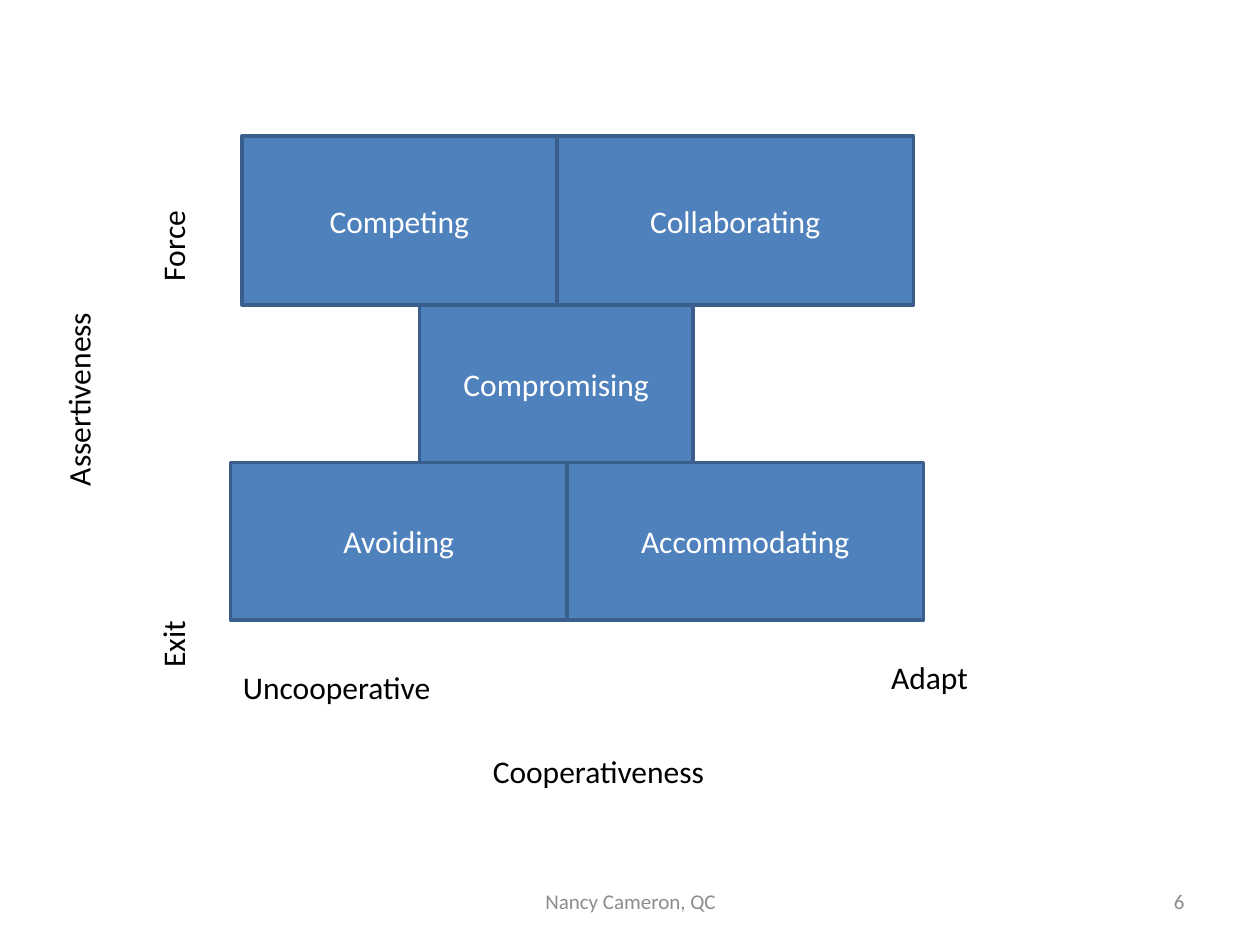
from pptx import Presentation
from pptx.dml.color import RGBColor
from pptx.enum.shapes import MSO_SHAPE
from pptx.enum.text import MSO_ANCHOR, MSO_AUTO_SIZE, PP_ALIGN
from pptx.oxml.ns import qn
from pptx.util import Inches, Pt

THEME = {
    "font": "Calibri", "body": 18, "small": 12, "edge": 2,
    "fill": "4F81BD", "line": "3A5F8C",
    "light": "FFFFFF", "dark": "000000", "grey": "8C8C8C",
}
LEFT, MID, RIGHT = PP_ALIGN.LEFT, PP_ALIGN.CENTER, PP_ALIGN.RIGHT

TOP = 1.08
ROWS = [
    (1.92, 1.34, [("Competing", 2.5), ("Collaborating", 2.83)]),
    (3.33, 1.25, [("Compromising", 2.17)]),
    (1.83, 1.25, [("Avoiding", 2.67), ("Accommodating", 2.83)]),
]
LABELS = [
    ("Cooperativeness", (3, 5.92, 3.5, 0.4), {"align": MID}),
    ("Uncooperative", (1.83, 5.25, 2.04, 0.4), {}),
    ("Adapt", (6, 5.17, 1.78, 0.4), {"align": RIGHT}),
    ("Assertiveness", (0.42, 1.92, 0.5, 2.5), {"align": MID, "turn": True}),
    ("Exit", (1.17, 4.93, 0.5, 0.47), {"turn": True, "wrap": False}),
    ("Force", (1.17, 1.5, 0.5, 0.83), {"turn": True}),
]
FOOTER = [
    ("Nancy Cameron, QC", (3.42, 6.95, 3.17, 0.4), MID),
    ("6", (7.17, 6.95, 2.33, 0.4), RIGHT),
]


def write(shape, text, size="body", color="dark", align=LEFT,
          anchor=MSO_ANCHOR.TOP, wrap=True, turn=False, grow=False):
    """Put formatted text into a shape."""
    frame = shape.text_frame
    frame.word_wrap = wrap
    frame.vertical_anchor = anchor
    if grow:
        frame.auto_size = MSO_AUTO_SIZE.SHAPE_TO_FIT_TEXT
    if turn:
        shape.element.find(".//" + qn("a:bodyPr")).set("vert", "vert270")
    para = frame.paragraphs[0]
    para.alignment = align
    run = para.add_run()
    run.text = text
    run.font.name = THEME["font"]
    run.font.size = Pt(THEME[size])
    run.font.color.rgb = RGBColor.from_string(THEME[color])


def block(slide, text, box):
    """Draw one filled and outlined cell."""
    shape = slide.shapes.add_shape(MSO_SHAPE.RECTANGLE, *map(Inches, box))
    shape.shadow.inherit = False
    shape.fill.solid()
    shape.fill.fore_color.rgb = RGBColor.from_string(THEME["fill"])
    shape.line.color.rgb = RGBColor.from_string(THEME["line"])
    shape.line.width = Pt(THEME["edge"])
    write(shape, text, color="light", align=MID, anchor=MSO_ANCHOR.MIDDLE)


def label(slide, text, box, **style):
    """Add one text box."""
    write(slide.shapes.add_textbox(*map(Inches, box)), text, **style)


def main():
    """Build the grid of conflict modes and save it."""
    deck = Presentation()
    deck.slide_width, deck.slide_height = Inches(10), Inches(7.5)
    slide = deck.slides.add_slide(deck.slide_layouts[6])
    top = TOP
    for left, high, cells in ROWS:
        for text, wide in cells:
            block(slide, text, (left, top, wide, high))
            left += wide
        top += high
    for text, box, style in LABELS:
        label(slide, text, box, grow=True, **style)
    for text, box, align in FOOTER:
        label(slide, text, box, size="small", color="grey",
              align=align, anchor=MSO_ANCHOR.MIDDLE)
    deck.save("out.pptx")


if __name__ == "__main__":
    main()
